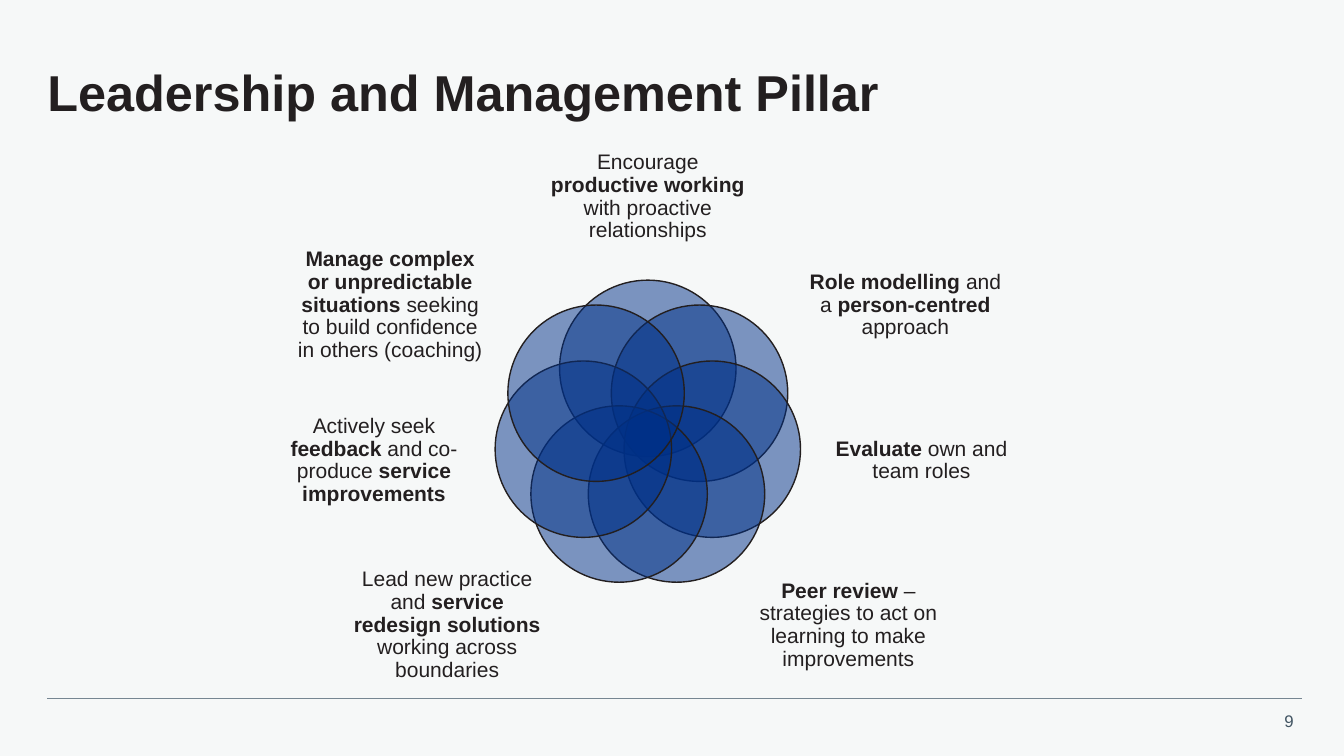
import math

from lxml import etree
from pptx import Presentation
from pptx import util as u
from pptx.dml.color import RGBColor
from pptx.enum import shapes, text
from pptx.oxml.ns import qn

INK = RGBColor(0x23, 0x1F, 0x20)
NAVY = RGBColor(0x00, 0x30, 0x87)
SLATE = RGBColor(0x42, 0x55, 0x63)
RULE = RGBColor(0x76, 0x86, 0x92)
PAPER = RGBColor(0xF6, 0xF8, 0xF8)

CENTRE_X, CENTRE_Y = 6.425, 4.31
RING, DIAMETER = 0.656, 1.75

PETALS = [
    ((5.42, 1.42, 2.01, 1.07),
     "Encourage *productive working *with proactive relationships"),
    ((8.03, 2.44, 1.9, 1.18),
     "*Role modelling* and a *person-centred* approach"),
    ((8.21, 3.94, 1.86, 1.26), "*Evaluate* own and team roles"),
    ((7.41, 5.63, 2.01, 1.15),
     "*Peer review *– strategies to act on learning to make improvements"),
    ((3.43, 5.63, 2.01, 1.15),
     "Lead new practice and *service redesign solutions *"
     "working across boundaries"),
    ((2.78, 3.94, 1.86, 1.26),
     "Actively seek *feedback* and co-produce *service improvements*"),
    ((2.92, 2.44, 1.9, 1.18),
     "*Manage complex or unpredictable situations *"
     "seeking to build confidence in others (coaching)"),
]


class Deck:
    font = "Arial"

    def __init__(self):
        self.prs = Presentation()
        self.prs.slide_width = u.Inches(13.33)
        self.prs.slide_height = u.Inches(7.5)
        self.s = self.prs.slides.add_slide(self.prs.slide_layouts[5])
        fill = self.s.background.fill
        fill.solid()
        fill.fore_color.rgb = PAPER

    def style(self, r, size, color=INK, bold=False):
        r.font.name = self.font
        r.font.size = u.Pt(size)
        r.font.bold = bold
        r.font.color.rgb = color

    def frame(self, sp, wrap=True):
        tf = sp.text_frame
        tf.word_wrap = wrap
        tf.vertical_anchor = text.MSO_ANCHOR.MIDDLE
        tf.margin_left = tf.margin_right = 0
        tf.margin_top = tf.margin_bottom = 0
        return tf

    def title(self, words, x, y, w, h):
        sp = self.s.shapes.title
        sp.left, sp.top = u.Inches(x), u.Inches(y)
        sp.width, sp.height = u.Inches(w), u.Inches(h)
        tf = self.frame(sp)
        tf.text = words
        p = tf.paragraphs[0]
        p.alignment = text.PP_ALIGN.LEFT
        p.line_spacing = 0.9
        self.style(p.runs[0], 36, bold=True)

    def label(self, words, x, y, w, h):
        sp = self.s.shapes.add_textbox(*map(u.Inches, (x, y, w, h)))
        p = self.frame(sp).paragraphs[0]
        p.alignment = text.PP_ALIGN.CENTER
        p.line_spacing = 0.9
        for i, part in enumerate(words.split("*")):
            if part:
                r = p.add_run()
                r.text = part
                self.style(r, 15, bold=i % 2 == 1)

    def circle(self, cx, cy, d):
        sp = self.s.shapes.add_shape(
            shapes.MSO_SHAPE.OVAL, u.Inches(cx - d / 2), u.Inches(cy - d / 2),
            u.Inches(d), u.Inches(d))
        sp.shadow.inherit = False
        sp.fill.solid()
        sp.fill.fore_color.rgb = NAVY
        color = sp.fill._xPr.find(qn("a:solidFill"))[0]
        etree.SubElement(color, qn("a:alpha")).set("val", "50000")
        sp.line.color.rgb = INK
        sp.line.width = u.Pt(1)

    def rule(self, x1, x2, y):
        line = self.s.shapes.add_connector(
            shapes.MSO_CONNECTOR.STRAIGHT, *map(u.Inches, (x1, y, x2, y)))
        line.line.color.rgb = RULE
        line.line.width = u.Pt(0.5)
        etree.SubElement(line._element.spPr, qn("a:effectLst"))

    def page_number(self, number, x, y, w, h):
        sp = self.s.shapes.add_textbox(*map(u.Inches, (x, y, w, h)))
        tf = self.frame(sp, wrap=False)
        tf.margin_left = tf.margin_right = u.Inches(0.1)
        tf.text = number
        p = tf.paragraphs[0]
        p.alignment = text.PP_ALIGN.RIGHT
        self.style(p.runs[0], 12, SLATE)


def main():
    deck = Deck()
    deck.title("Leadership and Management Pillar", 0.47, 0.47, 12.47, 0.95)
    deck.rule(0.47, 12.91, 6.93)
    deck.page_number("9", 12.52, 7, 0.41, 0.3)
    for i, (box, words) in enumerate(PETALS):
        angle = math.tau * i / len(PETALS)
        deck.circle(CENTRE_X + RING * math.sin(angle),
                    CENTRE_Y - RING * math.cos(angle), DIAMETER)
        deck.label(words, *box)
    deck.prs.save("out.pptx")


if __name__ == "__main__":
    main()
